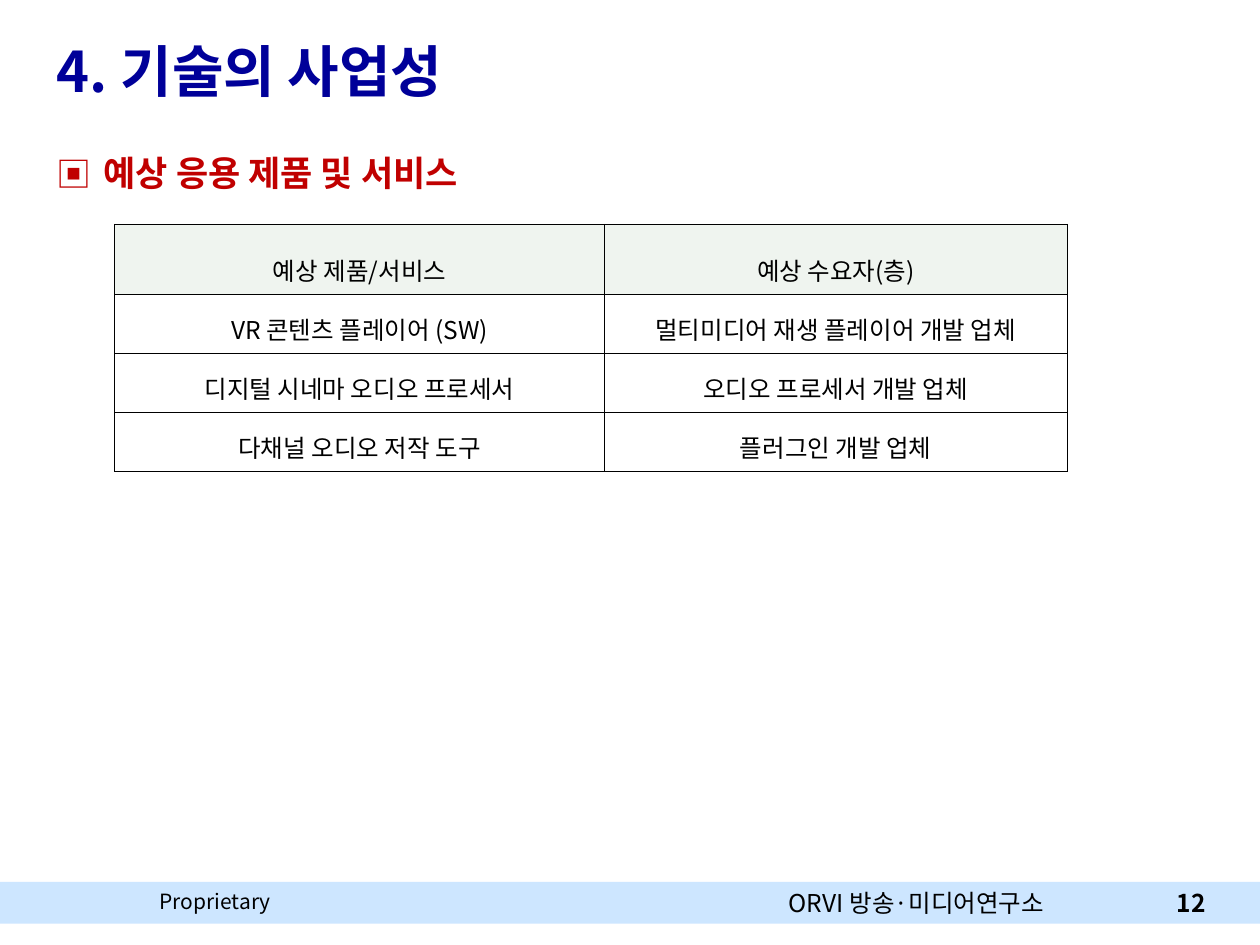
from dataclasses import dataclass

from lxml import etree
from pptx import Presentation
from pptx.dml.color import RGBColor
from pptx.enum.shapes import MSO_SHAPE
from pptx.enum.text import MSO_ANCHOR, PP_ALIGN
from pptx.oxml.ns import qn
from pptx.util import Cm, Pt

RECT = MSO_SHAPE.RECTANGLE
TOP, MIDDLE = MSO_ANCHOR.TOP, MSO_ANCHOR.MIDDLE
LEFT, CENTER, RIGHT = PP_ALIGN.LEFT, PP_ALIGN.CENTER, PP_ALIGN.RIGHT


@dataclass(frozen=True)
class Theme:
    font: str = "Noto Sans CJK KR"
    text: str = "000000"
    title: str = "000099"
    heading: str = "C00000"
    footer: str = "CDE6FF"
    header_row: str = "EFF4EF"
    title_size: float = 32
    heading_size: float = 20
    body_size: float = 14
    small_size: float = 12
    border: float = 0.56


class SlideBuilder:
    def __init__(self, slide, theme):
        self.slide = slide
        self.theme = theme

    def bar(self, x, y, w, h, color):
        sp = self.slide.shapes.add_shape(RECT, Cm(x), Cm(y), Cm(w), Cm(h))
        sp.shadow.inherit = False
        sp.fill.solid()
        sp.fill.fore_color.rgb = RGBColor.from_string(color)
        sp.line.fill.background()

    def run(self, p, text, size, color=None, bold=False):
        r = p.add_run()
        r.text = text
        r.font.size = Pt(size)
        r.font.bold = bold
        r.font.color.rgb = RGBColor.from_string(color or self.theme.text)
        r.font.name = self.theme.font
        ea = etree.SubElement(r.font._element, qn("a:ea"))
        ea.set("typeface", self.theme.font)

    def text(self, x, y, w, h, text, size, color=None, bold=False,
             align=LEFT, anchor=TOP, wrap=True, bullet=None):
        s = self.slide.shapes.add_textbox(Cm(x), Cm(y), Cm(w), Cm(h))
        tf = s.text_frame
        tf.word_wrap = wrap
        tf.vertical_anchor = anchor
        p = tf.paragraphs[0]
        p.alignment = align
        if bullet:
            self.bullet(p, bullet, color)
        self.run(p, text, size, color, bold)

    def bullet(self, p, char, color, indent=0.95):
        pPr = p._p.get_or_add_pPr()
        pPr.set("marL", str(Cm(indent)))
        pPr.set("indent", str(-Cm(indent)))
        clr = etree.SubElement(pPr, qn("a:buClr"))
        etree.SubElement(clr, qn("a:srgbClr")).set("val", color)
        etree.SubElement(pPr, qn("a:buFont")).set("typeface", self.theme.font)
        etree.SubElement(pPr, qn("a:buChar")).set("char", char)

    def table(self, x, y, widths, heights, rows):
        frame = self.slide.shapes.add_table(
            len(rows), len(widths), Cm(x), Cm(y),
            Cm(sum(widths)), Cm(sum(heights)))
        table = frame.table
        for column, width in zip(table.columns, widths):
            column.width = Cm(width)
        for i, (height, texts) in enumerate(zip(heights, rows)):
            table.rows[i].height = Cm(height)
            for j, text in enumerate(texts):
                self.cell(table.cell(i, j), text, header=i == 0)

    def cell(self, cell, text, header):
        cell.vertical_anchor = MIDDLE
        p = cell.text_frame.paragraphs[0]
        p.alignment = CENTER
        p.line_spacing = 1.6 if header else 1.3
        self.run(p, text, self.theme.body_size)
        self.borders(cell)
        if header:
            cell.fill.solid()
            cell.fill.fore_color.rgb = RGBColor.from_string(self.theme.header_row)
        else:
            cell.fill.background()

    def borders(self, cell):
        tcPr = cell._tc.get_or_add_tcPr()
        for side in ("lnL", "lnR", "lnT", "lnB"):
            ln = etree.SubElement(tcPr, qn(f"a:{side}"))
            ln.set("w", str(Pt(self.theme.border)))
            fill = etree.SubElement(ln, qn("a:solidFill"))
            etree.SubElement(fill, qn("a:srgbClr")).set("val", self.theme.text)


def main():
    prs = Presentation()
    prs.slide_width, prs.slide_height = Cm(25.4), Cm(19.05)
    t = Theme()
    s = SlideBuilder(prs.slides.add_slide(prs.slide_layouts[6]), t)

    footer_y, footer_h = 17.78, 0.84
    s.bar(0, footer_y, 25.4, footer_h, t.footer)
    s.text(2.97, footer_y, 3.38, 0.76, "Proprietary", t.small_size)
    s.text(15.65, footer_y, 6.71, footer_h, "ORVI 방송·미디어연구소", t.body_size)
    s.text(23.34, footer_y, 1.22, footer_h, "12", t.body_size, bold=True,
           align=RIGHT, anchor=MIDDLE, wrap=False)

    s.text(0.89, 0.61, 21.59, 1.6, "4. 기술의 사업성", t.title_size, t.title,
           bold=True, anchor=MIDDLE)
    s.text(0.89, 2.92, 23.6, 14.86, "예상 응용 제품 및 서비스", t.heading_size,
           t.heading, bold=True, bullet="▣")
    s.table(2.31, 4.52, [9.88, 9.32], [1.41] + [1.19] * 3, [
        ("예상 제품/서비스", "예상 수요자(층)"),
        ("VR 콘텐츠 플레이어 (SW)", "멀티미디어 재생 플레이어 개발 업체"),
        ("디지털 시네마 오디오 프로세서", "오디오 프로세서 개발 업체"),
        ("다채널 오디오 저작 도구", "플러그인 개발 업체"),
    ])
    prs.save("out.pptx")


if __name__ == "__main__":
    main()
